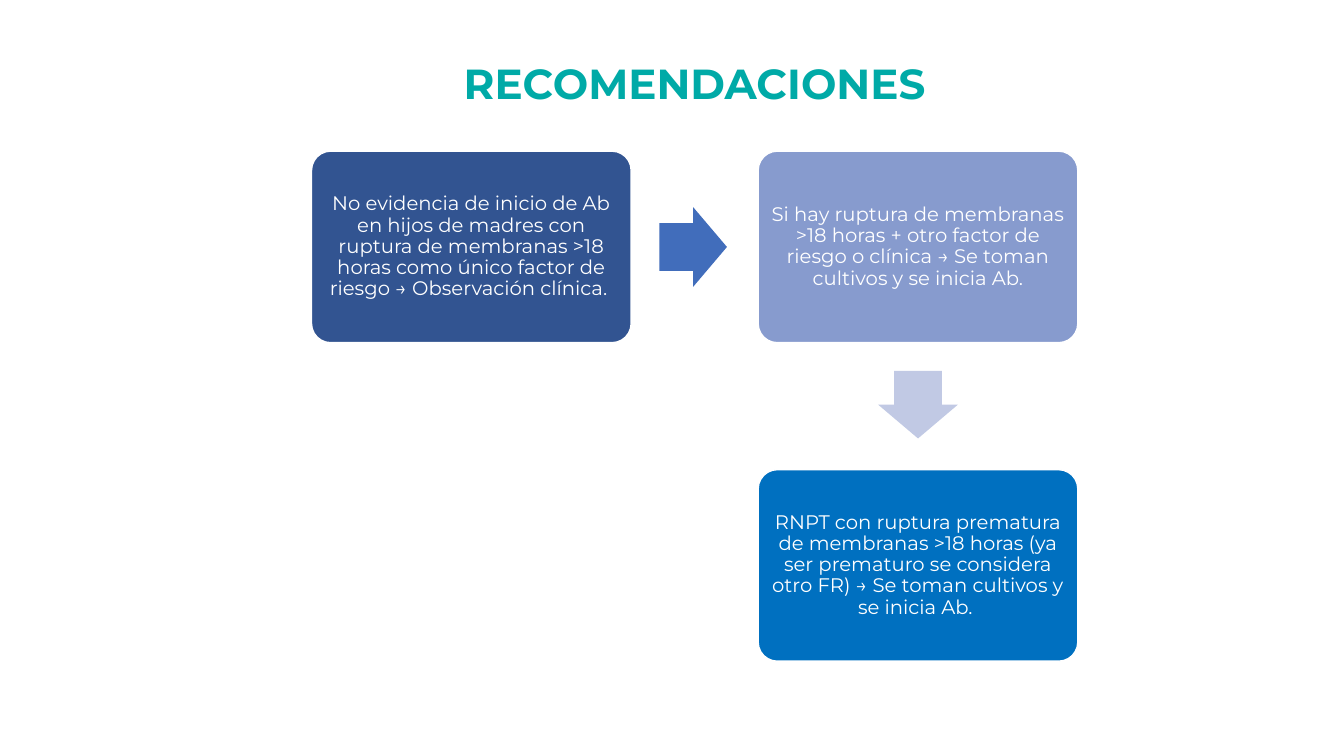
from dataclasses import dataclass

import pptx
import pptx.dml.color
import pptx.enum.shapes
import pptx.enum.text
import pptx.util
from pptx.util import Inches

SHAPES = pptx.enum.shapes.MSO_SHAPE


@dataclass(frozen=True)
class Theme:
    font: str = "Montserrat"
    title_size: int = 30
    step_size: int = 14
    title: str = "00AAA7"
    light: str = "FFFFFF"
    observe: str = "325491"
    treat: str = "879BCE"
    preterm: str = "0070C0"
    arrow_right: str = "416DBB"
    arrow_down: str = "C1C9E4"


THEME = Theme()
STEPS = [
    (0, 0, THEME.observe, "No evidencia de inicio de Ab en hijos de madres con ruptura de membranas >18 horas como único factor de riesgo → Observación clínica. "),
    (1, 0, THEME.treat, "Si hay ruptura de membranas >18 horas + otro factor de riesgo o clínica → Se toman cultivos y se inicia Ab."),
    (1, 1, THEME.preterm, "RNPT con ruptura prematura de membranas >18 horas (ya ser prematuro se considera otro FR) → Se toman cultivos y se inicia Ab. "),
]


def rgb(color):
    return pptx.dml.color.RGBColor.from_string(color)


def write(frame, text, size, color, bold=False):
    frame.word_wrap = True
    paragraph = frame.paragraphs[0]
    paragraph.text = text
    paragraph.alignment = pptx.enum.text.PP_ALIGN.CENTER
    paragraph.font.name = THEME.font
    paragraph.font.size = pptx.util.Pt(size)
    paragraph.font.bold = bold
    paragraph.font.color.rgb = rgb(color)
    return paragraph


def add_title(slide, left, top, width, height):
    heading = slide.shapes.add_textbox(left, top, width, height)
    write(heading.text_frame, "RECOMENDACIONES", THEME.title_size, THEME.title, True)


def add_step(slide, left, top, width, height, color, text):
    step = slide.shapes.add_shape(SHAPES.ROUNDED_RECTANGLE, left, top, width, height)
    step.adjustments[0] = 0.1
    step.shadow.inherit = False
    step.fill.solid()
    step.fill.fore_color.rgb = rgb(color)
    step.line.color.rgb = rgb(THEME.light)
    step.line.width = pptx.util.Pt(1)
    frame = step.text_frame
    frame.margin_left = frame.margin_right = Inches(0.06)
    frame.margin_top = frame.margin_bottom = Inches(0.06)
    frame.vertical_anchor = pptx.enum.text.MSO_ANCHOR.MIDDLE
    write(frame, text, THEME.step_size, THEME.light).line_spacing = 0.9


def add_arrow(slide, center_x, center_y, length, breadth, color, rotation):
    arrow = slide.shapes.add_shape(
        SHAPES.RIGHT_ARROW, center_x - length // 2, center_y - breadth // 2, length, breadth)
    arrow.adjustments[0] = 0.6
    arrow.adjustments[1] = 0.5
    arrow.rotation = rotation
    arrow.shadow.inherit = False
    arrow.fill.solid()
    arrow.fill.fore_color.rgb = rgb(color)
    arrow.line.fill.background()


def add_flow(slide, left, top, width, height):
    step_width, step_height = Inches(3.17), Inches(1.9)
    column_pitch, row_pitch = width - step_width, height - step_height
    for column, row, color, text in STEPS:
        add_step(slide, left + column * column_pitch, top + row * row_pitch,
                 step_width, step_height, color, text)

    length, breadth = Inches(0.67), Inches(0.79)
    reach = Inches(0.28) + length // 2
    add_arrow(slide, left + step_width + reach, top + step_height // 2,
              length, breadth, THEME.arrow_right, 0)
    add_arrow(slide, left + column_pitch + step_width // 2, top + step_height + reach,
              length, breadth, THEME.arrow_down, 90)


def main():
    presentation = pptx.Presentation()
    presentation.slide_width = Inches(13.33)
    presentation.slide_height = Inches(7.5)
    slide = presentation.slides.add_slide(presentation.slide_layouts[6])
    add_title(slide, Inches(3.78), Inches(0.52), Inches(6.22), Inches(0.61))
    add_flow(slide, Inches(3.09), Inches(1.5), Inches(7.6), Inches(5.06))
    presentation.save("out.pptx")


if __name__ == "__main__":
    main()
